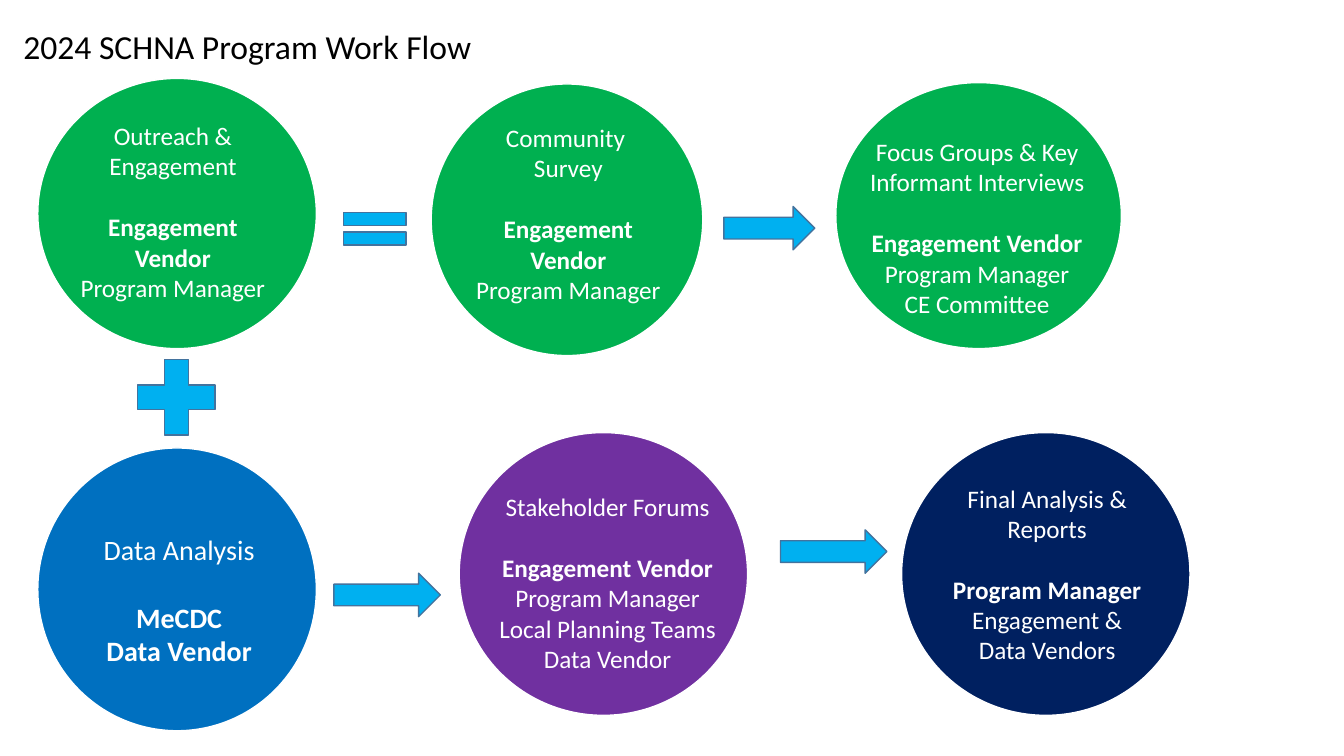
import pptx
import pptx.util
import pptx.dml.color
import pptx.enum.shapes
import pptx.enum.text

Pt = pptx.util.Pt
SHAPE = pptx.enum.shapes.MSO_SHAPE
ANCHOR = pptx.enum.text.MSO_ANCHOR
ALIGN = pptx.enum.text.PP_ALIGN
FONT = "Calibri"
WHITE, GREEN = "FFFFFF", "00B050"
LINE_HEIGHT = 1.22

# circle box, fill, label box offset from the circle, text size, topic lines, team lines (lead in bold)
STAGES = [
    ((27, 56, 199, 193), GREEN, (21, 40, 151, 110), 18,
     ["Outreach & Engagement"], [("Engagement Vendor", True), ("Program Manager", False)]),
    ((308, 60, 194, 194), GREEN, (22, 39, 152, 107), 18,
     ["Community ", "Survey"], [("Engagement Vendor", True), ("Program Manager", False)]),
    ((597, 59, 204, 190), GREEN, (19, 53, 164, 101), 18,
     ["Focus Groups & Key Informant Interviews"],
     [("Engagement Vendor", True), ("Program Manager", False), ("CE Committee", False)]),
    ((27, 320, 199, 202), "0070C0", (7, 37, 188, 143), 20,
     ["Data Analysis"], [("MeCDC", True), ("Data Vendor", True)]),
    ((328, 309, 206, 202), "7030A0", (22, 49, 168, 116), 18,
     ["Stakeholder Forums"],
     [("Engagement Vendor", True), ("Program Manager", False),
      ("Local Planning Teams", False), ("Data Vendor", False)]),
    ((644, 309, 206, 202), "002060", (28, 47, 152, 108), 18,
     ["Final Analysis & Reports"],
     [("Program Manager", True), ("Engagement &", False), ("Data Vendors", False)]),
]

SYMBOLS = [
    (SHAPE.MATH_EQUAL, (237.5, 144, 60.5, 39)),
    (SHAPE.RIGHT_ARROW, (517, 147.5, 65, 31)),
    (SHAPE.MATH_PLUS, (88.5, 247, 75, 73.5)),
    (SHAPE.RIGHT_ARROW, (238.5, 409.5, 76, 31)),
    (SHAPE.RIGHT_ARROW, (557.5, 378.5, 76, 31)),
]


def rgb(value):
    return pptx.dml.color.RGBColor.from_string(value)


def set_attributes(obj, values):
    for name, value in values.items():
        setattr(obj, name, value)


def set_font(font, size, color, bold=False):
    set_attributes(font, {"name": FONT, "size": Pt(size), "bold": bold})
    font.color.rgb = rgb(color)


def add_filled(shapes, kind, box, fill, line):
    sp = shapes.add_shape(kind, *map(Pt, box))
    sp.shadow.inherit = False
    sp.fill.solid()
    sp.fill.fore_color.rgb = rgb(fill)
    sp.line.color.rgb = rgb(line)
    sp.line.width = Pt(1)
    return sp


def add_title(slide, box):
    sp = slide.shapes.title
    set_attributes(sp, dict(zip(("left", "top", "width", "height"), map(Pt, box))))
    tf = sp.text_frame
    set_attributes(tf, {"text": "2024 SCHNA Program Work Flow",
                        "auto_size": pptx.enum.text.MSO_AUTO_SIZE.NONE,
                        "vertical_anchor": ANCHOR.TOP, "word_wrap": True})
    p = tf.paragraphs[0]
    p.alignment = ALIGN.LEFT
    set_font(p.runs[0].font, 24, "000000")


def add_stage(slide, box, fill, label, size, topic, team):
    """Group a circle with its label; the team starts one line below the topic."""
    group = slide.shapes.add_group_shape()
    add_filled(group.shapes, SHAPE.OVAL, box, fill, WHITE)
    dx, dy, width, height = label
    tb = group.shapes.add_textbox(*map(Pt, (box[0] + dx, box[1] + dy, width, height)))
    tf = tb.text_frame
    margins = dict.fromkeys(("margin_left", "margin_top", "margin_right", "margin_bottom"), Pt(3))
    set_attributes(tf, {"word_wrap": True, "vertical_anchor": ANCHOR.MIDDLE, **margins})
    lines = [(text, False) for text in topic] + team
    for i, (text, bold) in enumerate(lines):
        p = tf.add_paragraph() if i else tf.paragraphs[0]
        p.alignment = ALIGN.CENTER
        if i == len(topic):
            p.space_before = Pt(round(size * LINE_HEIGHT, 2))
        r = p.add_run()
        r.text = text
        set_font(r.font, size, WHITE, bold)


def main():
    prs = pptx.Presentation()
    prs.slide_width, prs.slide_height = Pt(960), Pt(540)
    slide = prs.slides.add_slide(prs.slide_layouts[5])
    add_title(slide, (9.5, 15, 919, 36))
    for stage in STAGES:
        add_stage(slide, *stage)
    for kind, box in SYMBOLS:
        add_filled(slide.shapes, kind, box, "00B0F0", "43739E")
    prs.save("out.pptx")


if __name__ == "__main__":
    main()
